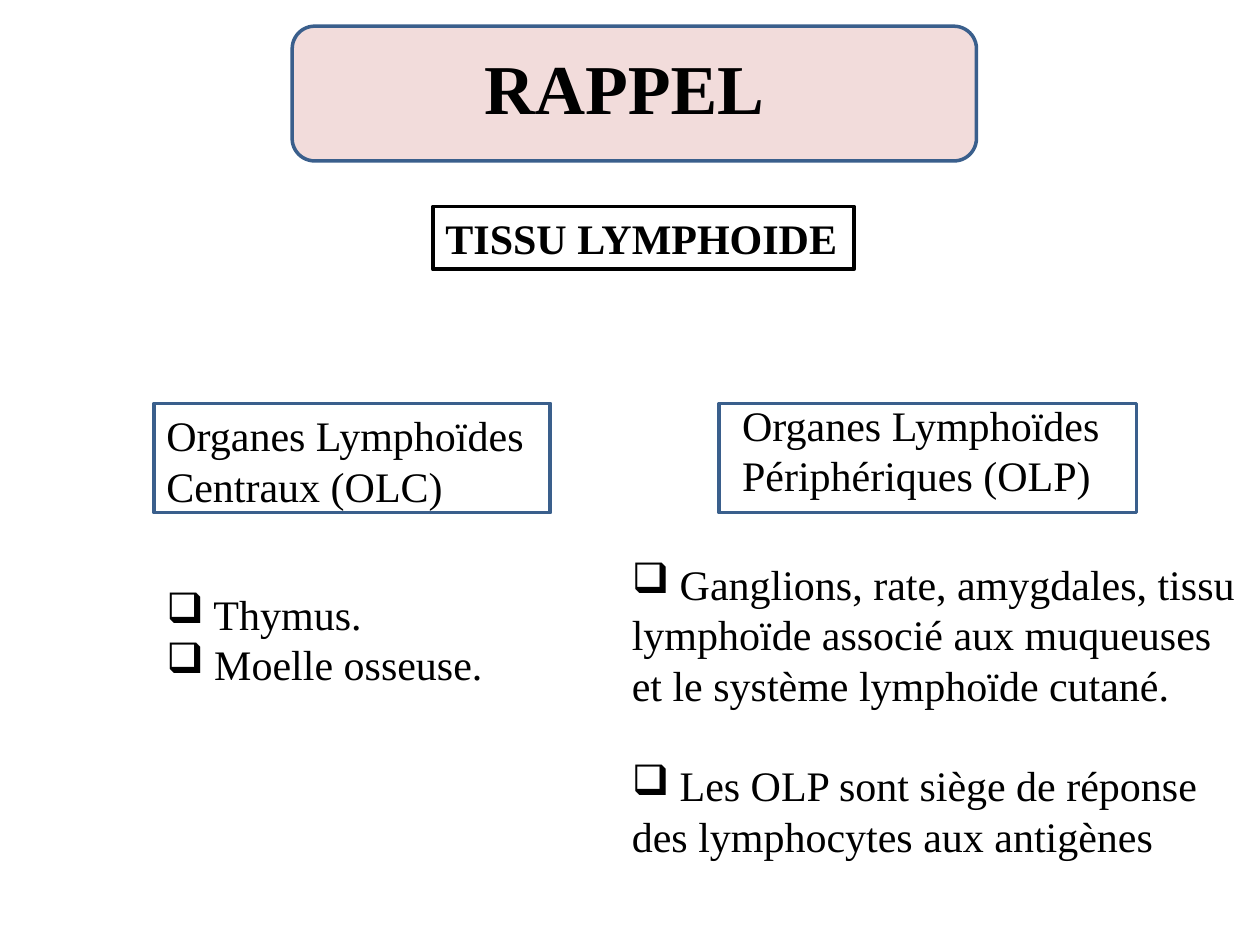
"""Build the slide that recalls the central and peripheral lymphoid organs."""
from dataclasses import dataclass

import lxml.etree
import pptx
import pptx.dml.color
import pptx.enum.shapes
import pptx.enum.text
import pptx.oxml.ns
import pptx.util

FONT = "Times New Roman"
BLACK, WHITE, PINK, BLUE = "000000", "FFFFFF", "F2DCDB", "3A5F8C"
SHAPES = pptx.enum.shapes.MSO_SHAPE
ALIGN = pptx.enum.text.PP_ALIGN
ANCHOR = pptx.enum.text.MSO_ANCHOR


@dataclass(frozen=True)
class Area:
    left: float
    top: float
    width: float
    height: float

    def lengths(self) -> list:
        return [pptx.util.Pt(value) for value in (self.left, self.top, self.width, self.height)]


@dataclass(frozen=True)
class Label:
    area: Area
    lines: tuple[str, ...]
    bullet: str = ""
    gap: float = 0
    wrap: bool = False
    bold: bool = False
    border: str = ""


@dataclass(frozen=True)
class Panel:
    area: Area
    kind: int
    fill: str


PANELS = (
    Panel(Area(411, 230.5, 238.5, 62.5), SHAPES.RECTANGLE, WHITE),
    Panel(Area(88, 230.5, 226.5, 62.5), SHAPES.RECTANGLE, WHITE),
    Panel(Area(167, 15, 391, 77), SHAPES.ROUNDED_RECTANGLE, PINK),
)
LABELS = (
    Label(Area(247.5, 118, 240.5, 36), ("TISSU LYMPHOIDE",), bold=True, border=BLACK),
    Label(Area(88, 230.5, 226.5, 65.5), ("Organes Lymphoïdes", "Centraux (OLC)")),
    Label(Area(417, 224.5, 226.5, 65.5), ("Organes Lymphoïdes", "Périphériques (OLP)")),
    Label(
        Area(354, 315.5, 366, 181.5),
        (
            " Ganglions, rate, amygdales, tissu lymphoïde associé aux muqueuses"
            " et le système lymphoïde cutané.",
            " Les OLP sont siège de réponse des lymphocytes aux antigènes",
        ),
        bullet="❑",
        gap=28.8,
        wrap=True,
    ),
    Label(Area(88, 332.5, 203, 65.5), (" Thymus.", " Moelle osseuse."), bullet="❑"),
)


def color(value: str) -> pptx.dml.color.RGBColor:
    return pptx.dml.color.RGBColor.from_string(value)


def write(para, text: str, *, size: float = 24, bold: bool = False, align=ALIGN.LEFT,
          bullet: str = "", before: float = 0) -> None:
    para.alignment = align
    para.space_before = pptx.util.Pt(before)
    if bullet:
        mark = lxml.etree.SubElement(para._p.get_or_add_pPr(), pptx.oxml.ns.qn("a:buChar"))
        mark.set("char", bullet)
    span = para.add_run()
    span.text = text
    span.font.name = FONT
    span.font.size = pptx.util.Pt(size)
    span.font.bold = bold
    span.font.color.rgb = color(BLACK)


def draw_panel(page, panel: Panel) -> None:
    box = page.shapes.add_shape(panel.kind, *panel.area.lengths())
    box.shadow.inherit = False
    box.fill.solid()
    box.fill.fore_color.rgb = color(panel.fill)
    box.line.color.rgb = color(BLUE)
    box.line.width = pptx.util.Pt(2)


def draw_title(page, text: str, area: Area) -> None:
    title = page.shapes.title
    title.left, title.top, title.width, title.height = area.lengths()
    title.text_frame.vertical_anchor = ANCHOR.MIDDLE
    write(title.text_frame.paragraphs[0], text, size=40, bold=True, align=ALIGN.CENTER)
    title.element.getparent().append(title.element)


def draw_label(page, label: Label) -> None:
    box = page.shapes.add_textbox(*label.area.lengths())
    frame = box.text_frame
    frame.word_wrap = label.wrap
    frame.auto_size = pptx.enum.text.MSO_AUTO_SIZE.SHAPE_TO_FIT_TEXT
    if label.border:
        box.line.color.rgb = color(label.border)
        box.line.width = pptx.util.Pt(2.25)
    for index, line in enumerate(label.lines):
        para = frame.add_paragraph() if index else frame.paragraphs[0]
        write(para, line, bold=label.bold, bullet=label.bullet, before=label.gap if index else 0)


def main() -> None:
    deck = pptx.Presentation()
    deck.slide_width, deck.slide_height = pptx.util.Pt(720), pptx.util.Pt(540)
    page = deck.slides.add_slide(deck.slide_layouts.get_by_name("Title Only"))
    for panel in PANELS:
        draw_panel(page, panel)
    draw_title(page, "RAPPEL ", Area(36.5, 15, 648, 69))
    for label in LABELS:
        draw_label(page, label)
    deck.save("out.pptx")


if __name__ == "__main__":
    main()
